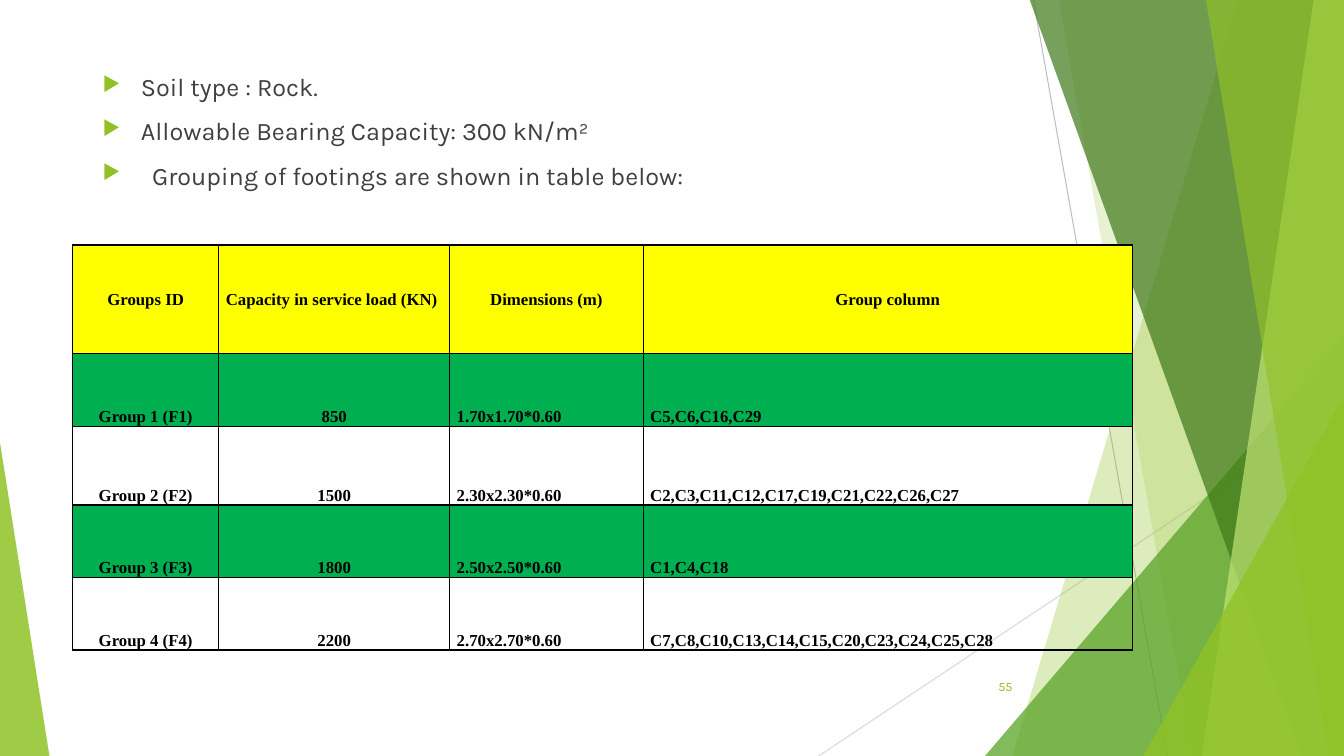
from dataclasses import dataclass

from lxml.etree import SubElement as Sub
from pptx import Presentation as Deck
from pptx.dml.color import RGBColor as Rgb
from pptx.enum.shapes import MSO_CONNECTOR as Link, MSO_SHAPE as Kind
from pptx.enum.text import MSO_ANCHOR as Anchor, PP_ALIGN as Align
from pptx.oxml.ns import qn
from pptx.util import Inches, Pt


@dataclass(frozen=True)
class Theme:
    """Colours, fonts and type sizes."""
    lime: str = "90C226"
    pale: str = "C0E474"
    leaf: str = "54A021"
    moss: str = "3F7819"
    ink: str = "404040"
    black: str = "000000"
    head: str = "FFFF00"
    band: str = "00B050"
    grey: str = "BFBFBF"
    light: str = "D9D9D9"
    sans: str = "Karla"
    serif: str = "Times New Roman"
    body: int = 18
    cell: int = 12
    page: int = 9


def apply(item, style):
    for name, value in style.items():
        setattr(item, name, value)


def paint(fill, color, alpha=100):
    fill.solid()
    fill.fore_color.rgb = Rgb.from_string(color)
    if alpha < 100:
        tone = fill._xPr.find(qn("a:solidFill"))[0]
        Sub(tone, qn("a:alpha"), val=str(alpha * 1000))


class Page:
    def __init__(self, deck, theme):
        self.theme = theme
        self.slide = deck.slides.add_slide(deck.slide_layouts[6])
        self.shapes = self.slide.shapes

    def line(self, start, end, color):
        ends = [Inches(v) for v in (*start, *end)]
        rule = self.shapes.add_connector(Link.STRAIGHT, *ends)
        rule.line.color.rgb = Rgb.from_string(color)
        rule.line.width = Pt(0.75)
        Sub(rule._element.spPr, qn("a:effectLst"))

    def finish(self, shape, color, alpha):
        shape.shadow.inherit = False
        shape.line.fill.background()
        paint(shape.fill, color, alpha)

    def blade(self, top, foot, color, alpha):
        """Full-height panel that runs to the right edge."""
        points = [(13.33, -0.01), (13.33, 7.5), (foot, 7.5)]
        pen = self.shapes.build_freeform(Inches(top), Inches(-0.01))
        pen.add_line_segments([(Inches(x), Inches(y)) for x, y in points])
        self.finish(pen.convert_to_shape(), color, alpha)

    def wedge(self, box, tip, color, alpha):
        shape = self.shapes.add_shape(Kind.ISOSCELES_TRIANGLE, *map(Inches, box))
        shape.adjustments[0] = tip
        self.finish(shape, color, alpha)

    def label(self, para, text, font, form):
        apply(para, form)
        run = para.add_run()
        run.text = text
        color = font["color"]
        apply(run.font, {k: v for k, v in font.items() if k != "color"})
        run.font.color.rgb = Rgb.from_string(color)

    def frame(self, box, form):
        frame = self.shapes.add_textbox(*map(Inches, box)).text_frame
        apply(frame, {"word_wrap": True, **form})
        return frame

    def bullets(self, box, items):
        look = self.theme
        frame = self.frame(box, {"vertical_anchor": Anchor.TOP})
        font = {"name": look.sans, "size": Pt(look.body), "color": look.ink}
        for i, (text, indent) in enumerate(items):
            para = frame.add_paragraph() if i else frame.paragraphs[0]
            self.label(para, text, font, {"space_before": Pt(10)})
            props = para._p.get_or_add_pPr()
            props.set("marL", str(Inches(indent)))
            props.set("indent", str(-Inches(indent)))
            tint = Sub(props, qn("a:buClr"))
            Sub(tint, qn("a:srgbClr"), val=look.lime)
            Sub(props, qn("a:buSzPct"), val="80000")
            Sub(props, qn("a:buChar"), char="▶")

    def number(self, box, text):
        look = self.theme
        frame = self.frame(box, {"vertical_anchor": Anchor.MIDDLE})
        font = {"name": look.sans, "size": Pt(look.page), "color": look.lime}
        self.label(frame.paragraphs[0], text, font, {"alignment": Align.RIGHT})

    def edges(self, cell):
        props = cell._tc.get_or_add_tcPr()
        for side in ("lnL", "lnR", "lnT", "lnB"):
            edge = Sub(props, qn("a:" + side), w=str(Pt(1)))
            fill = Sub(edge, qn("a:solidFill"))
            Sub(fill, qn("a:srgbClr"), val=self.theme.black)

    def table(self, box, wide, high, rows):
        look = self.theme
        grid = self.shapes.add_table(len(high), len(wide), *map(Inches, box)).table
        apply(grid, {"first_row": False, "horz_banding": False})
        for col, size in zip(grid.columns, wide):
            col.width = Inches(size)
        for row, size in zip(grid.rows, high):
            row.height = Inches(size)
        font = {"name": look.serif, "size": Pt(look.cell), "bold": True,
                "color": look.black}
        pad = {"margin_left": Inches(0.07), "margin_right": Inches(0.07),
               "margin_top": 0, "margin_bottom": 0}
        for r, row in enumerate(rows):
            for c, text in enumerate(row):
                cell = grid.cell(r, c)
                anchor = Anchor.BOTTOM if r else Anchor.MIDDLE
                apply(cell, {**pad, "vertical_anchor": anchor})
                self.edges(cell)
                # Yellow head, then green and clear rows in turn
                if r and r % 2 == 0:
                    cell.fill.background()
                else:
                    paint(cell.fill, look.band if r else look.head)
                mid = c < 2 if r else c != 1
                form = {"alignment": Align.CENTER if mid else Align.LEFT,
                        "line_spacing": 1.07}
                self.label(cell.text_frame.paragraphs[0], text, font, form)


def main():
    deck = Deck()
    apply(deck, {"slide_width": Inches(13.33), "slide_height": Inches(7.5)})
    look = Theme()
    page = Page(deck, look)

    # Backdrop of lines, panels and wedges
    page.line((10.25, 0), (11.58, 7.5), look.grey)
    page.line((13.33, 4.03), (8.12, 7.5), look.light)
    page.blade(12.28, 10.04, look.lime, 30)
    page.blade(10.5, 11.83, look.lime, 20)
    page.wedge((9.77, 3.33, 3.56, 4.17), 1, look.leaf, 72)
    page.blade(10.21, 12.91, look.moss, 70)
    page.blade(13.03, 11.92, look.pale, 70)
    page.blade(11.96, 13.18, look.lime, 65)
    page.wedge((11.34, 3.93, 1.99, 3.57), 1, look.lime, 80)
    page.wedge((0, 4.39, 0.49, 3.11), 0, look.lime, 85)

    # Soil facts
    page.bullets((0.92, 0.66, 11.5, 6.09), [
        ("Soil type : Rock.", 0.38),
        ("Allowable Bearing Capacity: 300 kN/m²", 0.38),
        ("Grouping of footings are shown in table below:", 0.49),
    ])
    page.number((9.39, 6.61, 0.75, 0.4), "55")

    # Footing groups
    page.table((0.72, 2.43, 10.51, 4.02), (1.45, 2.29, 1.92, 4.85),
               (1.08, 0.72, 0.78, 0.72, 0.72), [
        ("Groups ID", "Capacity in service load (KN)", "Dimensions (m)",
         "Group column"),
        ("Group 1 (F1)", "850", "1.70x1.70*0.60", "C5,C6,C16,C29"),
        ("Group 2 (F2)", "1500", "2.30x2.30*0.60",
         "C2,C3,C11,C12,C17,C19,C21,C22,C26,C27"),
        ("Group 3 (F3)", "1800", "2.50x2.50*0.60", "C1,C4,C18"),
        ("Group 4 (F4)", "2200", "2.70x2.70*0.60",
         "C7,C8,C10,C13,C14,C15,C20,C23,C24,C25,C28"),
    ])
    deck.save("out.pptx")


if __name__ == "__main__":
    main()
